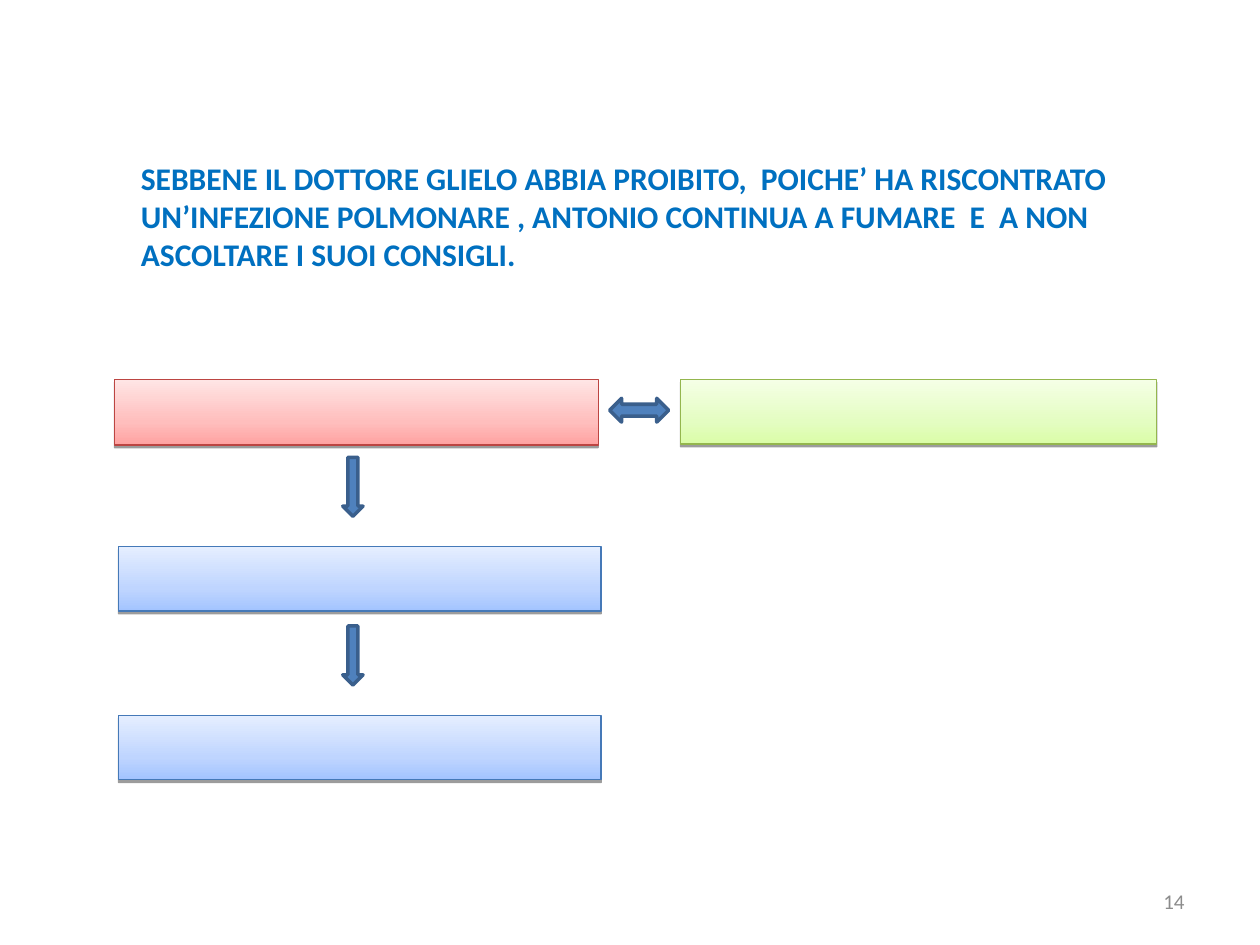
from copy import deepcopy
from dataclasses import dataclass

from lxml.etree import SubElement
from pptx import Presentation
from pptx.dml.color import RGBColor
from pptx.enum.shapes import MSO_SHAPE as Preset
from pptx.enum.text import MSO_ANCHOR as Anchor, MSO_AUTO_SIZE as AutoSize, PP_ALIGN as Align
from pptx.oxml.ns import qn
from pptx.shapes.autoshape import Shape
from pptx.slide import Slide
from pptx.util import Cm, Pt

ROW_STEP = 3.4
STOP_POSITIONS = (0, 0.35, 1)
RED = ("FFA2A1", "FFBEBD", "FFE5E5")
GREEN = ("DAFDA7", "E4FDC2", "F5FFE6")
BLUE = ("A3C4FF", "BFD5FF", "E5EEFF")


@dataclass(frozen=True)
class Area:
    left: float
    top: float
    width: float
    height: float

    def lengths(self) -> tuple:
        return Cm(self.left), Cm(self.top), Cm(self.width), Cm(self.height)


@dataclass(frozen=True)
class Clause:
    area: Area
    shades: tuple[str, str, str]
    outline: str


@dataclass(frozen=True)
class Arrow:
    area: Area
    preset: Preset


@dataclass(frozen=True)
class Caption:
    area: Area
    lines: tuple[str, ...]
    color: str
    font: dict
    frame: dict
    paragraph: dict


def rgb(value: str) -> RGBColor:
    return RGBColor.from_string(value)


def apply(target: object, values: dict) -> None:
    for key, value in values.items():
        setattr(target, key, value)


def add_outlined(slide: Slide, preset: Preset, area: Area, color: str, width: float) -> Shape:
    shape = slide.shapes.add_shape(preset, *area.lengths())
    shape.shadow.inherit = False
    shape.line.color.rgb = rgb(color)
    shape.line.width = Pt(width)
    return shape


def shade(shape: Shape, shades: tuple[str, str, str]) -> None:
    shape.fill.gradient()
    shape.fill.gradient_angle = 90
    stop_list = shape._element.spPr.find(qn("a:gradFill")).find(qn("a:gsLst"))
    stop_list.append(deepcopy(stop_list[0]))
    for stop, position, color in zip(shape.fill.gradient_stops, STOP_POSITIONS, shades):
        stop.position = position
        stop.color.rgb = rgb(color)


def drop_shadow(shape: Shape) -> None:
    effects = shape._element.spPr.find(qn("a:effectLst"))
    shadow = SubElement(effects, qn("a:outerShdw"), blurRad="0", dist=str(Pt(1.6)),
                        dir="5400000", rotWithShape="0")
    color = SubElement(shadow, qn("a:srgbClr"), val="000000")
    SubElement(color, qn("a:alpha"), val="38000")


def draw_clause(slide: Slide, clause: Clause) -> None:
    box = add_outlined(slide, Preset.RECTANGLE, clause.area, clause.outline, 0.75)
    shade(box, clause.shades)
    drop_shadow(box)


def draw_arrow(slide: Slide, arrow: Arrow) -> None:
    pointer = add_outlined(slide, arrow.preset, arrow.area, "3A5F8C", 2)
    pointer.fill.solid()
    pointer.fill.fore_color.rgb = rgb("4F81BD")


def draw_caption(slide: Slide, caption: Caption) -> None:
    frame = slide.shapes.add_textbox(*caption.area.lengths()).text_frame
    frame.text = "\n".join(caption.lines)
    apply(frame, {"vertical_anchor": Anchor.MIDDLE, **caption.frame})
    for paragraph in frame.paragraphs:
        apply(paragraph, caption.paragraph)
        for run in paragraph.runs:
            apply(run.font, {"name": "Calibri", **caption.font})
            run.font.color.rgb = rgb(caption.color)


SENTENCE = Caption(
    Area(2.59, 3.07, 20.32, 2.57),
    ("SEBBENE IL DOTTORE GLIELO ABBIA PROIBITO,  POICHE’ HA RISCONTRATO",
     "UN’INFEZIONE POLMONARE , ANTONIO CONTINUA A FUMARE  E  A NON",
     "ASCOLTARE I SUOI CONSIGLI."),
    "0070C0",
    {"size": Pt(18), "bold": True},
    {"word_wrap": False, "auto_size": AutoSize.SHAPE_TO_FIT_TEXT},
    {"alignment": Align.LEFT},
)
PAGE_NUMBER = Caption(
    Area(18.21, 17.65, 5.92, 1.02), ("14",), "8C8C8C",
    {"size": Pt(12)}, {"word_wrap": True}, {"alignment": Align.RIGHT},
)
CLAUSES = [
    Clause(Area(2.31, 7.65, 9.75, 1.32), RED, "BC4542"),
    Clause(Area(13.72, 7.65, 9.6, 1.3), GREEN, "94B64E"),
    *(Clause(Area(2.39, 11.02 + row * ROW_STEP, 9.73, 1.3), BLUE, "4579B8") for row in range(2)),
]
ARROWS = [
    *(Arrow(Area(6.91, 9.22 + row * ROW_STEP, 0.41, 1.19), Preset.DOWN_ARROW) for row in range(2)),
    Arrow(Area(12.29, 8.03, 1.19, 0.48), Preset.LEFT_RIGHT_ARROW),
]


def main() -> None:
    deck = Presentation()
    apply(deck, {"slide_width": Cm(25.4), "slide_height": Cm(19.05)})
    slide = deck.slides.add_slide(deck.slide_layouts.get_by_name("Blank"))
    draw_caption(slide, SENTENCE)
    for clause in CLAUSES:
        draw_clause(slide, clause)
    for arrow in ARROWS:
        draw_arrow(slide, arrow)
    draw_caption(slide, PAGE_NUMBER)
    deck.save("out.pptx")


if __name__ == "__main__":
    main()
